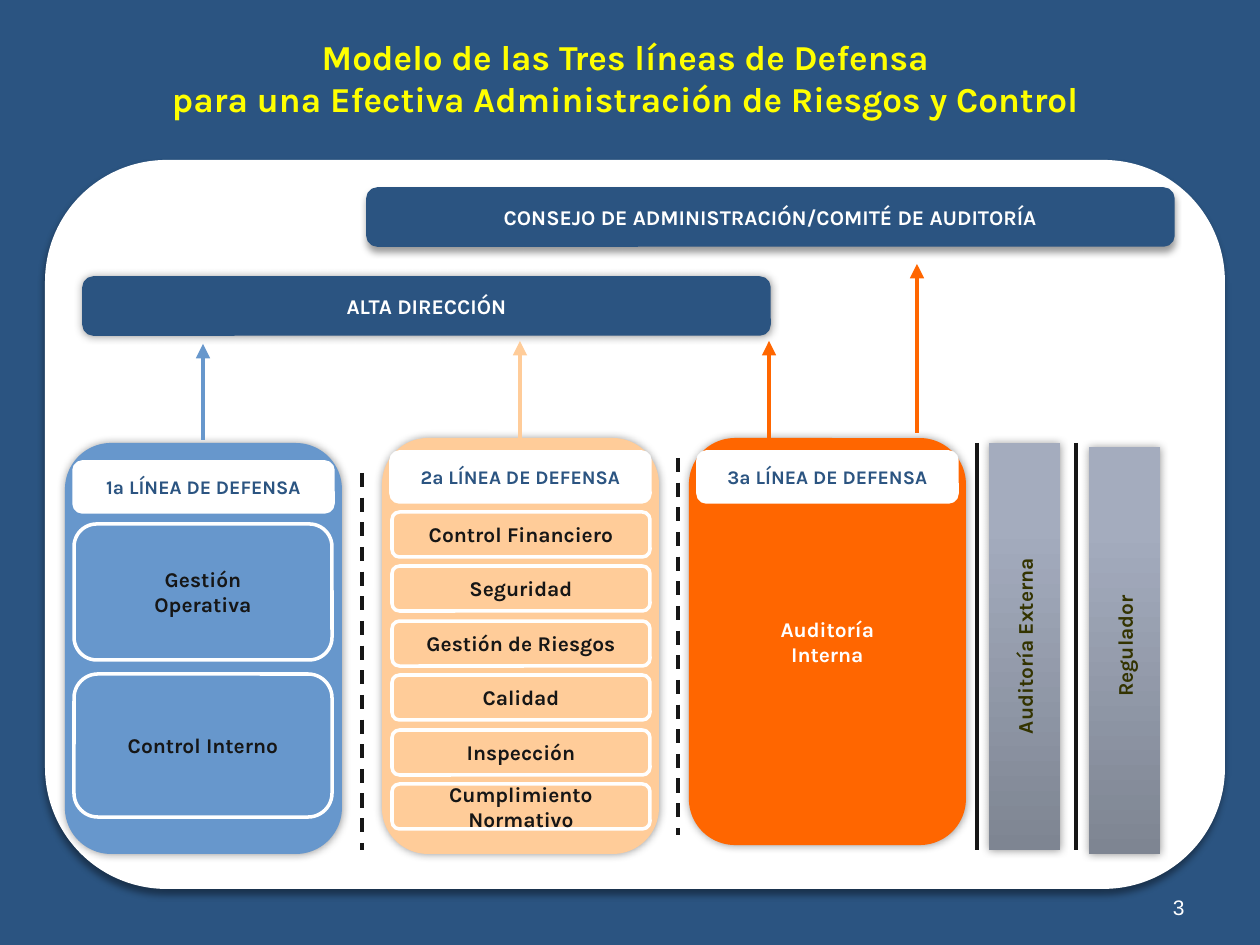
from lxml import etree
from pptx import Presentation
from pptx.dml.color import RGBColor
from pptx.enum.dml import MSO_LINE
from pptx.enum.shapes import MSO_CONNECTOR, MSO_SHAPE
from pptx.enum.text import MSO_ANCHOR, PP_ALIGN
from pptx.oxml.ns import qn
from pptx.util import Emu, Pt

ROUNDED, RECTANGLE = MSO_SHAPE.ROUNDED_RECTANGLE, MSO_SHAPE.RECTANGLE
STRAIGHT, DASH = MSO_CONNECTOR.STRAIGHT, MSO_LINE.DASH
CENTER, RIGHT = PP_ALIGN.CENTER, PP_ALIGN.RIGHT
MIDDLE, BOTTOM = MSO_ANCHOR.MIDDLE, MSO_ANCHOR.BOTTOM

NAVY, BLUE, PEACH, ORANGE = "2B5481", "6797CC", "FFCC99", "FF6600"
WHITE, BLACK, YELLOW, OLIVE = "FFFFFF", "161616", "FFFF00", "333300"
GLOW = (5, 0, 0)     # blur pt, distance pt, direction in degrees
DROP = (4, 3, 90)


def px(length):
    return Emu(round(length * 914400 / 126))


def color(code):
    return RGBColor.from_string(code)


def write(shape, lines, size, code, bold=True, font="Karla",
          align=CENTER, anchor=MIDDLE):
    """One paragraph per line."""
    frame = shape.text_frame
    frame.word_wrap = True
    frame.vertical_anchor = anchor
    for index, line in enumerate(lines):
        para = frame.paragraphs[0] if index == 0 else frame.add_paragraph()
        para.alignment = align
        for part, words in enumerate(line.split("\n")):
            if part:
                para.add_line_break()
            span = para.add_run()
            span.text = words
            span.font.name = font
            span.font.size = Pt(size)
            span.font.bold = bold
            span.font.color.rgb = color(code)


def add_shadow(shape, blur, distance, direction):
    effects = shape._element.spPr.find(qn("a:effectLst"))
    outer = etree.SubElement(effects, qn("a:outerShdw"), blurRad=str(Pt(blur)),
                             dist=str(Pt(distance)), dir=str(direction * 60000),
                             algn="ctr", rotWithShape="0")
    tint = etree.SubElement(outer, qn("a:srgbClr"), val="000000")
    etree.SubElement(tint, qn("a:alpha"), val="40000")


def add_panel(page, frame, fill=None, line=None, shadow=None, kind=ROUNDED):
    box = page.shapes.add_shape(kind, *map(px, frame))
    if fill:
        box.fill.solid()
        box.fill.fore_color.rgb = color(fill)
    else:
        box.fill.background()
    if line:
        box.line.color.rgb = color(line)
        box.line.width = Pt(2)
    else:
        box.line.fill.background()
    box.shadow.inherit = False
    if shadow:
        add_shadow(box, *shadow)
    return box


def add_line(page, start, end, code, width=2, dashed=False, arrow=False):
    line = page.shapes.add_connector(STRAIGHT, *map(px, start + end))
    line.line.color.rgb = color(code)
    line.line.width = Pt(width)
    if dashed:
        line.line.dash_style = DASH
    if arrow:
        etree.SubElement(line.line._get_or_add_ln(), qn("a:tailEnd"), type="triangle")
    etree.SubElement(line._element.spPr, qn("a:effectLst"))


def add_outside_column(page, left, top, label):
    """Grey upright bar with its label turned to read upwards."""
    column = add_panel(page, (left, top, 71, 407), WHITE, shadow=GLOW, kind=RECTANGLE)
    column.fill.gradient()
    column.fill.gradient_angle = 90
    for stop, code, position in zip(column.fill.gradient_stops,
                                    ("7E8592", "A4ACBE"), (0, 0.8)):
        stop.color.rgb = color(code)
        stop.position = position
    box = page.shapes.add_textbox(*map(px, (left - 168, 627, 407, 38)))
    box.rotation = 270
    write(box, [label], 12, OLIVE)


def add_defense_line(page, frame, fill, header_top, header):
    add_panel(page, frame, fill, shadow=GLOW)
    label = add_panel(page, (frame[0] + 9, header_top, 259, 50), WHITE, WHITE)
    write(label, [header], 11, NAVY)


def add_item(page, frame, lines):
    write(add_panel(page, frame, line=WHITE), lines, 12, BLACK)


def main():
    deck = Presentation()
    deck.slide_width, deck.slide_height = px(1260), px(945)
    page = deck.slides.add_slide(deck.slide_layouts[5])
    page.background.fill.solid()
    page.background.fill.fore_color.rgb = color(NAVY)

    # Title and page number
    title = page.shapes.title
    title.left, title.top, title.width, title.height = map(px, (0, 0, 1251, 155))
    write(title, ["Modelo de las Tres líneas de Defensa\n"
                  "para una Efectiva Administración de Riesgos y Control"], 20, YELLOW)
    number = page.shapes.add_textbox(*map(px, (903, 861, 294, 65)))
    write(number, ["3"], 12, WHITE, False, "Arial", RIGHT, BOTTOM)

    # White base and outside parties
    add_panel(page, (45, 160, 1180, 729), WHITE, shadow=DROP)
    add_outside_column(page, 989, 443, "Auditoría Externa")
    add_outside_column(page, 1089, 447, "Regulador")

    # Three lines of defense
    add_defense_line(page, (65, 443, 277, 411), BLUE, 462, "1ª LÍNEA DE DEFENSA")
    add_defense_line(page, (382, 438, 277, 416), PEACH, 452, "2ª LÍNEA DE DEFENSA")
    add_defense_line(page, (689, 438, 277, 407), ORANGE, 452, "3ª LÍNEA DE DEFENSA")

    # Functions inside each line
    add_item(page, (74, 524, 258, 136), ["Gestión", "Operativa"])
    add_item(page, (74, 674, 258, 143), ["Control Interno"])
    functions = ["Control Financiero", "Seguridad", "Gestión de Riesgos",
                 "Calidad", "Inspección", "Cumplimiento Normativo"]
    for row, name in enumerate(functions):
        add_item(page, (392, round(512 + row * 54.4), 258, 45), [name])
    audit = add_panel(page, (689, 438, 277, 407))
    write(audit, ["Auditoría", "Interna"], 12, WHITE)

    # Separators
    for x, top in ((362, 473), (678, 458)):
        add_line(page, (x, top), (x, top + 377), BLACK, dashed=True)
    for x in (977, 1076):
        add_line(page, (x, 443), (x, 850), BLACK)

    # Governing bodies
    management = add_panel(page, (84, 278, 685, 56), NAVY, NAVY, GLOW)
    write(management, ["ALTA DIRECCIÓN"], 12, WHITE)
    council = add_panel(page, (368, 189, 805, 56), NAVY, NAVY, DROP)
    write(council, ["CONSEJO DE ADMINISTRACIÓN/COMITÉ DE AUDITORÍA"], 12, WHITE)

    # Reporting arrows
    for x, bottom, top, code in ((520, 438, 341, PEACH), (769, 438, 341, ORANGE),
                                 (917, 433, 264, ORANGE), (203, 440, 344, BLUE)):
        add_line(page, (x, bottom), (x, top), code, 2.75, arrow=True)

    deck.save("out.pptx")


if __name__ == "__main__":
    main()
